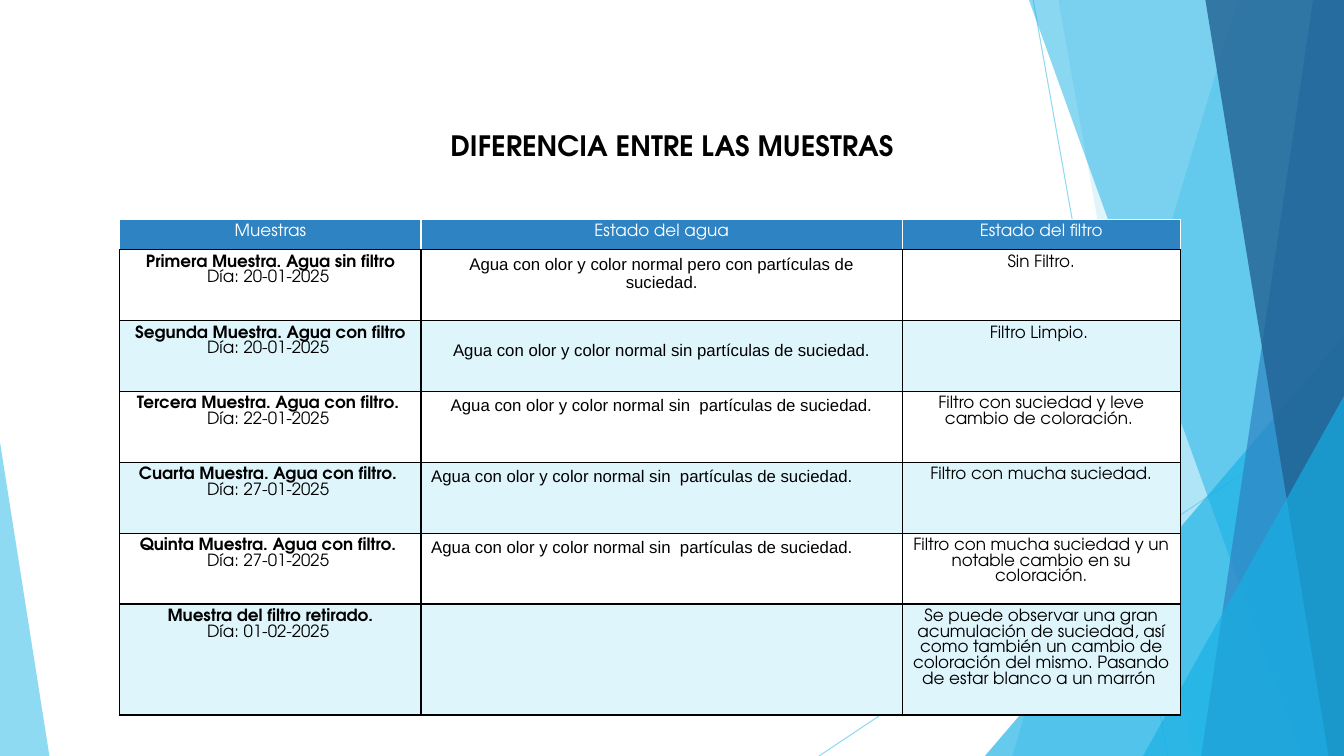
from dataclasses import dataclass

from lxml.etree import SubElement
from pptx import Presentation
from pptx.dml.color import RGBColor
from pptx.enum.shapes import MSO_CONNECTOR, MSO_SHAPE
from pptx.enum.text import MSO_AUTO_SIZE, PP_ALIGN
from pptx.oxml import parse_xml
from pptx.oxml.ns import nsdecls, qn
from pptx.shapes.autoshape import Shape
from pptx.slide import Slide
from pptx.table import _Cell as Cell
from pptx.text.text import _Paragraph as Paragraph
from pptx.util import Pt

WIDTH, HEIGHT = 960, 540
BLACK = RGBColor(0x00, 0x00, 0x00)
WHITE = RGBColor(0xFF, 0xFF, 0xFF)
SKY = RGBColor(0x5F, 0xCB, 0xEF)
CYAN = RGBColor(0x17, 0xB0, 0xE4)
BLUE = RGBColor(0x2E, 0x83, 0xC3)
NAVY = RGBColor(0x22, 0x62, 0x92)
PALE = RGBColor(0xDF, 0xF5, 0xFC)
DISPLAY, BODY = "TeX Gyre Adventor", "Arial"


@dataclass(frozen=True)
class Ray:
    start: tuple[float, float]
    end: tuple[float, float]


@dataclass(frozen=True)
class Band:
    top_left: float
    bottom_left: float
    color: RGBColor
    opacity: int


@dataclass(frozen=True)
class Corner:
    left: float
    top: float
    width: float
    apex: float
    color: RGBColor
    opacity: int


@dataclass(frozen=True)
class Sample:
    name: str
    day: str
    water: str
    filter_state: str
    height: float = 50.6
    water_align: PP_ALIGN = PP_ALIGN.CENTER
    water_top: float = 3.6


RAYS = [Ray((738, 0), (834, HEIGHT)), Ray((WIDTH, 290), (585, HEIGHT))]
FACETS = [
    Band(884, 723, SKY, 36),
    Band(756, 852, SKY, 20),
    Corner(703.5, 240, 256.5, 1, CYAN, 66),
    Band(735, 929.5, CYAN, 50),
    Band(938, 858, BLUE, 70),
    Band(861, 949, NAVY, 80),
    Corner(816.5, 283, 143.5, 1, CYAN, 66),
    Corner(0, 316, 35.3, 0, SKY, 70),
]
HEADERS = ["Muestras", "Estado del agua", "Estado del filtro"]
COLUMNS = [215.2, 343.8, 198.4]
HEADER_HEIGHT = 21.2
CLEAN = "Agua con olor y color normal sin  partículas de suciedad."
SAMPLES = [
    Sample("Primera Muestra. Agua sin filtro", "Día: 20-01-2025 ",
           "Agua con olor y color normal pero con partículas de suciedad.", "Sin Filtro."),
    Sample("Segunda Muestra. Agua con filtro", "Día: 20-01-2025 ",
           "Agua con olor y color normal sin partículas de suciedad.", "Filtro Limpio. ",
           water_top=14.8),
    Sample("Tercera Muestra. Agua con filtro. ", "Día: 22-01-2025 ", CLEAN,
           "Filtro con suciedad y leve cambio de coloración. "),
    Sample("Cuarta Muestra. Agua con filtro. ", "Día: 27-01-2025 ", CLEAN,
           "Filtro con mucha suciedad.", water_align=PP_ALIGN.LEFT),
    Sample("Quinta Muestra. Agua con filtro. ", "Día: 27-01-2025 ", CLEAN,
           "Filtro con mucha suciedad y un notable cambio en su coloración.",
           water_align=PP_ALIGN.LEFT),
    Sample("Muestra del filtro retirado.", "Día: 01-02-2025 ", "",
           "Se puede observar una gran acumulación de suciedad, así como también un cambio "
           "de coloración del mismo. Pasando de estar blanco a un marrón ", height=79.2),
]


def set_opacity(fill_parent, percent: int) -> None:
    color = fill_parent.find(qn("a:solidFill")).find(qn("a:srgbClr"))
    SubElement(color, qn("a:alpha")).set("val", str(percent * 1000))


def paint(shape: Shape, color: RGBColor, opacity: int) -> None:
    shape.shadow.inherit = False
    shape.fill.solid()
    shape.fill.fore_color.rgb = color
    set_opacity(shape._element.spPr, opacity)
    shape.line.fill.background()


def draw_ray(page: Slide, ray: Ray) -> None:
    points = [Pt(value) for value in ray.start + ray.end]
    line = page.shapes.add_connector(MSO_CONNECTOR.STRAIGHT, *points)
    line.line.width = Pt(0.75)
    line.line.color.rgb = SKY
    properties = line._element.spPr
    set_opacity(properties.find(qn("a:ln")), 70)
    SubElement(properties, qn("a:effectLst"))


def draw_facet(page: Slide, facet: Band | Corner) -> None:
    if isinstance(facet, Band):
        outline = page.shapes.build_freeform(Pt(facet.top_left), 0)
        edges = [(WIDTH, 0), (WIDTH, HEIGHT), (facet.bottom_left, HEIGHT)]
        outline.add_line_segments([(Pt(x), Pt(y)) for x, y in edges], close=True)
        shape = outline.convert_to_shape()
    else:
        shape = page.shapes.add_shape(
            MSO_SHAPE.ISOSCELES_TRIANGLE, Pt(facet.left), Pt(facet.top),
            Pt(facet.width), Pt(HEIGHT - facet.top))
        shape.adjustments[0] = facet.apex
    paint(shape, facet.color, facet.opacity)


def style(para: Paragraph, size: float = 12, font: str = DISPLAY, color: RGBColor = BLACK,
          bold: bool = False, align: PP_ALIGN = PP_ALIGN.CENTER) -> None:
    para.alignment = align
    for span in para.runs:
        span.font.size = Pt(size)
        span.font.name = font
        span.font.bold = bold
        span.font.color.rgb = color


def draw_title(page: Slide) -> None:
    box = page.shapes.add_textbox(0, Pt(88.6), Pt(WIDTH), Pt(31.7))
    frame = box.text_frame
    frame.word_wrap = True
    frame.auto_size = MSO_AUTO_SIZE.SHAPE_TO_FIT_TEXT
    frame.text = "DIFERENCIA ENTRE LAS MUESTRAS"
    style(frame.paragraphs[0], size=20, bold=True)


def finish_cell(cell: Cell, fill: RGBColor, side_color: RGBColor) -> None:
    cell.fill.solid()
    cell.fill.fore_color.rgb = fill
    properties = cell._tc.get_or_add_tcPr()
    sides = {"lnL": side_color, "lnR": side_color, "lnT": side_color, "lnB": BLACK}
    for index, (side, color) in enumerate(sides.items()):
        border = parse_xml(
            f'<a:{side} {nsdecls("a")} w="{Pt(1)}"><a:solidFill>'
            f'<a:srgbClr val="{color}"/></a:solidFill></a:{side}>')
        properties.insert(index, border)


def draw_table(page: Slide) -> None:
    heights = [HEADER_HEIGHT] + [sample.height for sample in SAMPLES]
    table = page.shapes.add_table(
        len(heights), len(COLUMNS), Pt(85.6), Pt(156.8),
        Pt(sum(COLUMNS)), Pt(sum(heights))).table
    for column, width in zip(table.columns, COLUMNS):
        column.width = Pt(width)
    for row, height in zip(table.rows, heights):
        row.height = Pt(height)
    for cell, label in zip(table.rows[0].cells, HEADERS):
        cell.text_frame.text = label
        style(cell.text_frame.paragraphs[0], color=WHITE)
        finish_cell(cell, BLUE, WHITE)
    for number, sample in enumerate(SAMPLES, start=1):
        name, water, state = table.rows[number].cells
        name.text_frame.text = f"{sample.name}\n{sample.day}"
        style(name.text_frame.paragraphs[0], bold=True)
        style(name.text_frame.paragraphs[1])
        water.text_frame.text = sample.water
        water.margin_top = Pt(sample.water_top)
        style(water.text_frame.paragraphs[0], font=BODY, align=sample.water_align)
        state.text_frame.text = sample.filter_state
        style(state.text_frame.paragraphs[0])
        for cell in (name, water, state):
            finish_cell(cell, WHITE if number % 2 else PALE, BLACK)


def main() -> None:
    deck = Presentation()
    deck.slide_width, deck.slide_height = Pt(WIDTH), Pt(HEIGHT)
    page = deck.slides.add_slide(deck.slide_layouts[6])
    for ray in RAYS:
        draw_ray(page, ray)
    for facet in FACETS:
        draw_facet(page, facet)
    draw_title(page)
    draw_table(page)
    deck.save("out.pptx")


if __name__ == "__main__":
    main()
